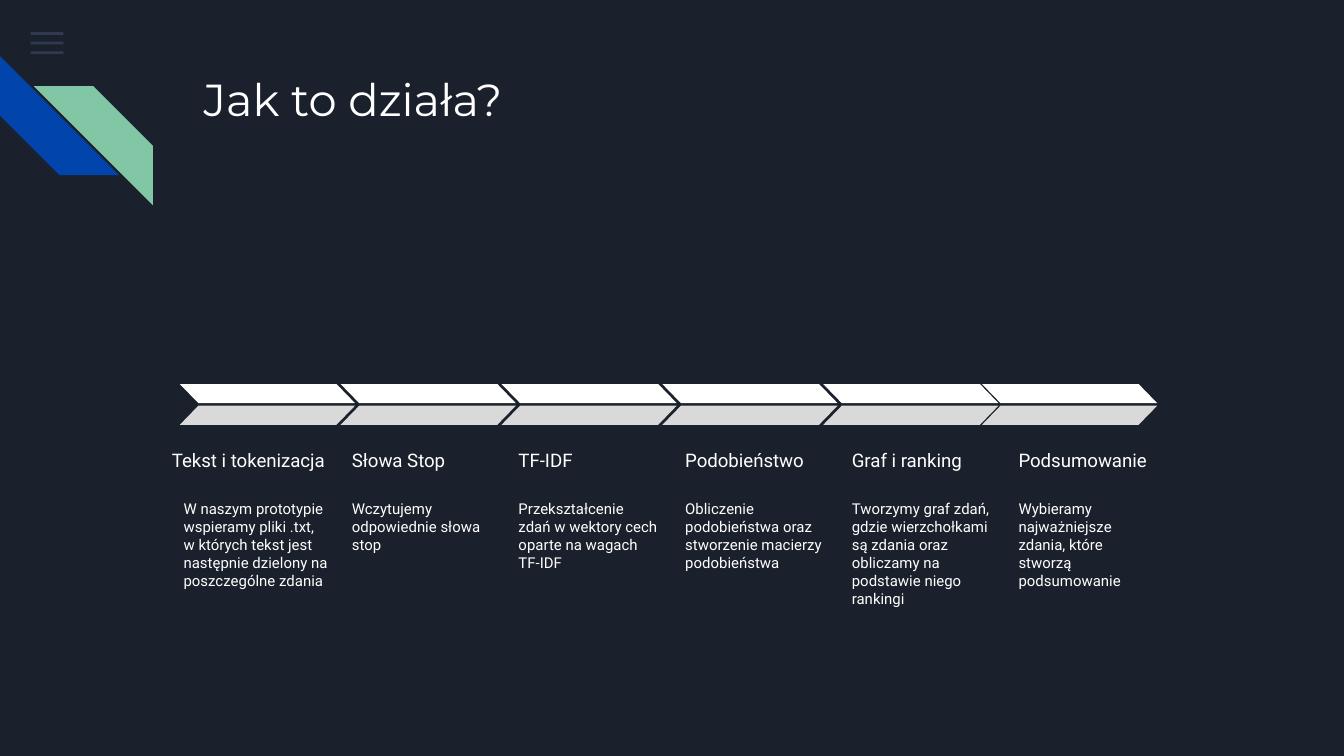
import pptx
import pptx.dml.color
import pptx.enum.shapes
import pptx.enum.text
import pptx.oxml
import pptx.oxml.ns
import pptx.util

COLORS = {
    "background": "1B212C",
    "white": "FFFFFF",
    "grey": "D9D9D9",
    "menu": "55688B",
    "blue": "0145AC",
    "green": "82C7A5",
}
SHAPES = pptx.enum.shapes.MSO_SHAPE
ANCHOR = pptx.enum.text.MSO_ANCHOR


class Deck:
    heading_font = "Montserrat"
    text_font = "Roboto"
    inset = pptx.util.Cm(0.25)

    def __init__(self, width, height):
        self.presentation = pptx.Presentation()
        self.presentation.slide_width = pptx.util.Cm(width)
        self.presentation.slide_height = pptx.util.Cm(height)
        layout = self.presentation.slide_layouts[5]
        self.slide = self.presentation.slides.add_slide(layout)
        background = self.slide.background.fill
        background.solid()
        background.fore_color.rgb = self.color("background")

    def color(self, name):
        return pptx.dml.color.RGBColor.from_string(COLORS[name])

    def set_text(self, frame, text, size, font, anchor):
        frame.word_wrap = True
        frame.auto_size = pptx.enum.text.MSO_AUTO_SIZE.NONE
        frame.vertical_anchor = anchor
        frame.margin_left = frame.margin_right = self.inset
        frame.margin_top = frame.margin_bottom = self.inset
        paragraph = frame.paragraphs[0]
        paragraph.alignment = pptx.enum.text.PP_ALIGN.LEFT
        run = paragraph.add_run()
        run.text = text
        run.font.size = pptx.util.Pt(size)
        run.font.name = font
        run.font.color.rgb = self.color("white")

    def title(self, text, *box):
        heading = self.slide.shapes.title
        heading.left, heading.top, heading.width, heading.height = map(pptx.util.Cm, box)
        self.set_text(heading.text_frame, text, 24, self.heading_font, ANCHOR.TOP)

    def text(self, text, size, anchor, *box):
        label = self.slide.shapes.add_textbox(*map(pptx.util.Cm, box))
        self.set_text(label.text_frame, text, size, self.text_font, anchor)

    def shape(self, kind, color, *box, adjust=None, flip=False, rotation=0, alpha=None):
        piece = self.slide.shapes.add_shape(kind, *map(pptx.util.Cm, box))
        piece.shadow.inherit = False
        piece.fill.solid()
        piece.fill.fore_color.rgb = self.color(color)
        piece.line.fill.background()
        piece.rotation = rotation
        if adjust is not None:
            piece.adjustments[0] = adjust
        if flip:
            piece._element.spPr.xfrm.set("flipH", "1")
        if alpha is not None:
            tint = piece._element.spPr.find(".//" + pptx.oxml.ns.qn("a:srgbClr"))
            namespace = pptx.oxml.ns.nsdecls("a")
            tint.append(pptx.oxml.parse_xml(f'<a:alpha {namespace} val="{alpha * 1000}"/>'))

    def chevron(self, left):
        for color, top, flip in (("white", 7.26, True), ("grey", 7.67, False)):
            self.shape(SHAPES.PARALLELOGRAM, color, left, top, 3.31, 0.36,
                       adjust=0.97, flip=flip)

    def save(self):
        self.presentation.save("out.pptx")


STEPS = [
    ("Tekst i tokenizacja",
     "W naszym prototypie wspieramy pliki .txt, w których tekst jest "
     "następnie dzielony na poszczególne zdania", 2.54),
    ("Słowa Stop", "Wczytujemy odpowiednie słowa stop", 1.85),
    ("TF-IDF", "Przekształcenie zdań w wektory cech oparte na wagach TF-IDF", 2.24),
    ("Podobieństwo",
     "Obliczenie podobieństwa oraz stworzenie macierzy podobieństwa", 1.85),
    ("Graf i ranking",
     "Tworzymy graf zdań, gdzie wierzchołkami są zdania oraz obliczamy "
     "na podstawie niego rankingi", 1.85),
    ("Podsumowanie",
     "Wybieramy najważniejsze zdania, które stworzą podsumowanie", 1.85),
]
CHEVRON_LEFTS = [3.4, 6.44, 9.48, 12.52, 15.56, 18.56]
COLUMN_WIDTH = 3.15


def main():
    deck = Deck(25.4, 14.29)
    for row in range(3):
        deck.shape(SHAPES.RECTANGLE, "menu", 0.58, 0.61 + 0.18 * row, 0.62, 0.05, alpha=36)
    deck.shape(SHAPES.DIAGONAL_STRIPE, "blue", 0, 1.06, 2.25, 2.25, adjust=0.5, rotation=270)
    deck.shape(SHAPES.DIAGONAL_STRIPE, "green", 0.64, 1.63, 2.25, 2.25, adjust=0.5, flip=True)
    deck.title("Jak to działa?", 3.6, 1.1, 19.55, 2.54)

    for index, (name, description, height) in enumerate(STEPS):
        left = 3.25 + COLUMN_WIDTH * index
        name_left, name_width, width = left, COLUMN_WIDTH, COLUMN_WIDTH
        if index == 0:
            name_left, name_width, left, width = 3.0, 3.48, 3.22, 3.25
        deck.text(name, 10, ANCHOR.MIDDLE, name_left, 8.13, name_width, 1.12)
        deck.text(description, 8, ANCHOR.TOP, left, 9.2, width, height)

    for left in CHEVRON_LEFTS:
        deck.chevron(left)
    deck.save()


if __name__ == "__main__":
    main()
